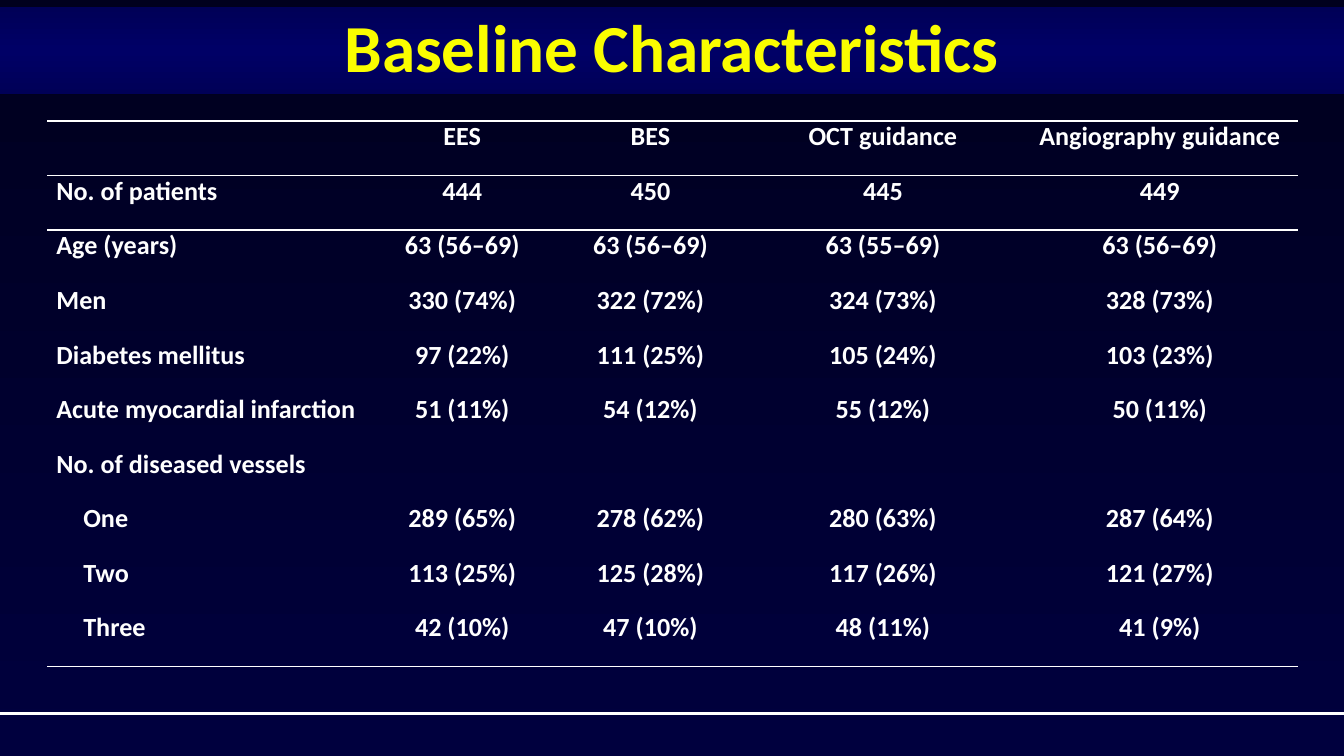
from copy import deepcopy
from dataclasses import dataclass

from pptx import Presentation
from pptx.dml.color import RGBColor
from pptx.enum.shapes import MSO_CONNECTOR, MSO_SHAPE
from pptx.enum.text import MSO_ANCHOR, MSO_AUTO_SIZE, PP_ALIGN
from pptx.oxml import parse_xml
from pptx.oxml.ns import nsdecls, qn
from pptx.util import Inches, Pt


@dataclass(frozen=True)
class Theme:
    font: str = "Calibri"
    title_size: float = 36
    table_size: float = 14
    title: str = "FAFD00"
    text: str = "FFFFFF"
    rule: str = "FFFFFF"
    background: tuple = ("00001D", "00003E")
    band: tuple = ("000057", "000066", "000057")


THEME = Theme()
PAGE_WIDTH = 10
PAGE_HEIGHT = PAGE_WIDTH * 9 / 16
NO_GRID_STYLE = "{2D5ABB26-0587-4C30-8999-92F81FD0307C}"

COLUMN_WIDTHS = (2.39, 1.4, 1.4, 2.06, 2.06)
ROWS = (
    ("", "EES", "BES", "OCT guidance", "Angiography guidance"),
    ("No. of patients", "444", "450", "445", "449"),
    ("Age (years)", "63 (56–69)", "63 (56–69)", "63 (55–69)", "63 (56–69)"),
    ("Men", "330 (74%)", "322 (72%)", "324 (73%)", "328 (73%)"),
    ("Diabetes mellitus", "97 (22%)", "111 (25%)", "105 (24%)", "103 (23%)"),
    ("Acute myocardial infarction", "51 (11%)", "54 (12%)", "55 (12%)", "50 (11%)"),
    ("No. of diseased vessels", "", "", "", ""),
    ("One", "289 (65%)", "278 (62%)", "280 (63%)", "287 (64%)"),
    ("Two", "113 (25%)", "125 (28%)", "117 (26%)", "121 (27%)"),
    ("Three", "42 (10%)", "47 (10%)", "48 (11%)", "41 (9%)"),
)
INDENTED_LABELS = {"One", "Two", "Three"}
RULED_EDGES = {0, 1, len(ROWS)}


def set_attributes(target, values):
    for name, value in values.items():
        setattr(target, name, value)


def add_text(para, text, size, color):
    span = para.add_run()
    span.text = text
    set_attributes(span.font, {"name": THEME.font, "size": Pt(size), "bold": True})
    span.font.color.rgb = RGBColor.from_string(color)


def paint_gradient(fill, element, colors):
    """Fill top to bottom with evenly spaced colours; element holds the fill."""
    fill.gradient()
    fill.gradient_angle = 270
    stop_list = next(element.iter(qn("a:gsLst")))
    while len(stop_list) < len(colors):
        stop_list.append(deepcopy(stop_list[0]))
    for index, (stop, color) in enumerate(zip(fill.gradient_stops, colors)):
        stop.position = index / (len(colors) - 1)
        stop.color.rgb = RGBColor.from_string(color)


def add_title(page, left, top, width, height):
    band = page.shapes.add_shape(
        MSO_SHAPE.RECTANGLE, Inches(left), Inches(top), Inches(width), Inches(height)
    )
    band.shadow.inherit = False
    band.line.fill.background()
    paint_gradient(band.fill, band._element.spPr, THEME.band)
    set_attributes(band.text_frame, {
        "word_wrap": True,
        "auto_size": MSO_AUTO_SIZE.SHAPE_TO_FIT_TEXT,
        "vertical_anchor": MSO_ANCHOR.MIDDLE,
        "margin_left": Inches(0.1),
        "margin_right": Inches(0.1),
        "margin_top": Inches(0.05),
        "margin_bottom": Inches(0.05),
    })
    para = band.text_frame.paragraphs[0]
    set_attributes(para, {"alignment": PP_ALIGN.CENTER, "line_spacing": 0.9})
    add_text(para, "Baseline Characteristics", THEME.title_size, THEME.title)


def add_footer_line(page, left, top, width):
    line = page.shapes.add_connector(
        MSO_CONNECTOR.STRAIGHT,
        Inches(left), Inches(top), Inches(left + width), Inches(top),
    )
    line.line.width = Pt(1.75)
    line.line.color.rgb = RGBColor.from_string(THEME.rule)
    line._element.spPr.append(parse_xml(f"<a:effectLst {nsdecls('a')}/>"))


def add_border(cell, side):
    cell._tc.get_or_add_tcPr().append(parse_xml(
        f'<a:{side} {nsdecls("a")} w="{Pt(1)}"><a:solidFill>'
        f'<a:srgbClr val="{THEME.rule}"/></a:solidFill></a:{side}>'
    ))


def fill_cell(cell, text, row, column):
    set_attributes(cell, {
        "margin_left": Inches(0.07),
        "margin_right": Inches(0.07),
        "margin_top": 0,
        "margin_bottom": 0,
        "vertical_anchor": MSO_ANCHOR.TOP,
    })
    for side, edge in (("lnT", row), ("lnB", row + 1)):
        if edge in RULED_EDGES:
            add_border(cell, side)
    cell.fill.background()
    para = cell.text_frame.paragraphs[0]
    para.alignment = PP_ALIGN.CENTER if column else PP_ALIGN.LEFT
    if text in INDENTED_LABELS:
        para._p.get_or_add_pPr().set("marL", str(Inches(0.2)))
    if text:
        add_text(para, text, THEME.table_size, THEME.text)


def add_characteristics(page, left, top, width, height):
    frame = page.shapes.add_table(
        len(ROWS), len(COLUMN_WIDTHS),
        Inches(left), Inches(top), Inches(width), Inches(height),
    )
    table = frame.table
    set_attributes(table, {"first_row": False, "horz_banding": False})
    next(frame._element.iter(qn("a:tableStyleId"))).text = NO_GRID_STYLE
    for column, column_width in zip(table.columns, COLUMN_WIDTHS):
        column.width = Inches(column_width)
    for row, texts in enumerate(ROWS):
        table.rows[row].height = Inches(height / len(ROWS))
        for column, text in enumerate(texts):
            fill_cell(table.cell(row, column), text, row, column)


def main():
    deck = Presentation()
    deck.slide_width, deck.slide_height = Inches(PAGE_WIDTH), Inches(PAGE_HEIGHT)
    page = deck.slides.add_slide(deck.slide_layouts[6])
    paint_gradient(page.background.fill, page._element, THEME.background)
    add_footer_line(page, 0, 5.31, PAGE_WIDTH)
    add_title(page, 0, 0.05, PAGE_WIDTH, 0.65)
    add_characteristics(page, 0.35, 0.9, sum(COLUMN_WIDTHS), 4.06)
    deck.save("out.pptx")


if __name__ == "__main__":
    main()
